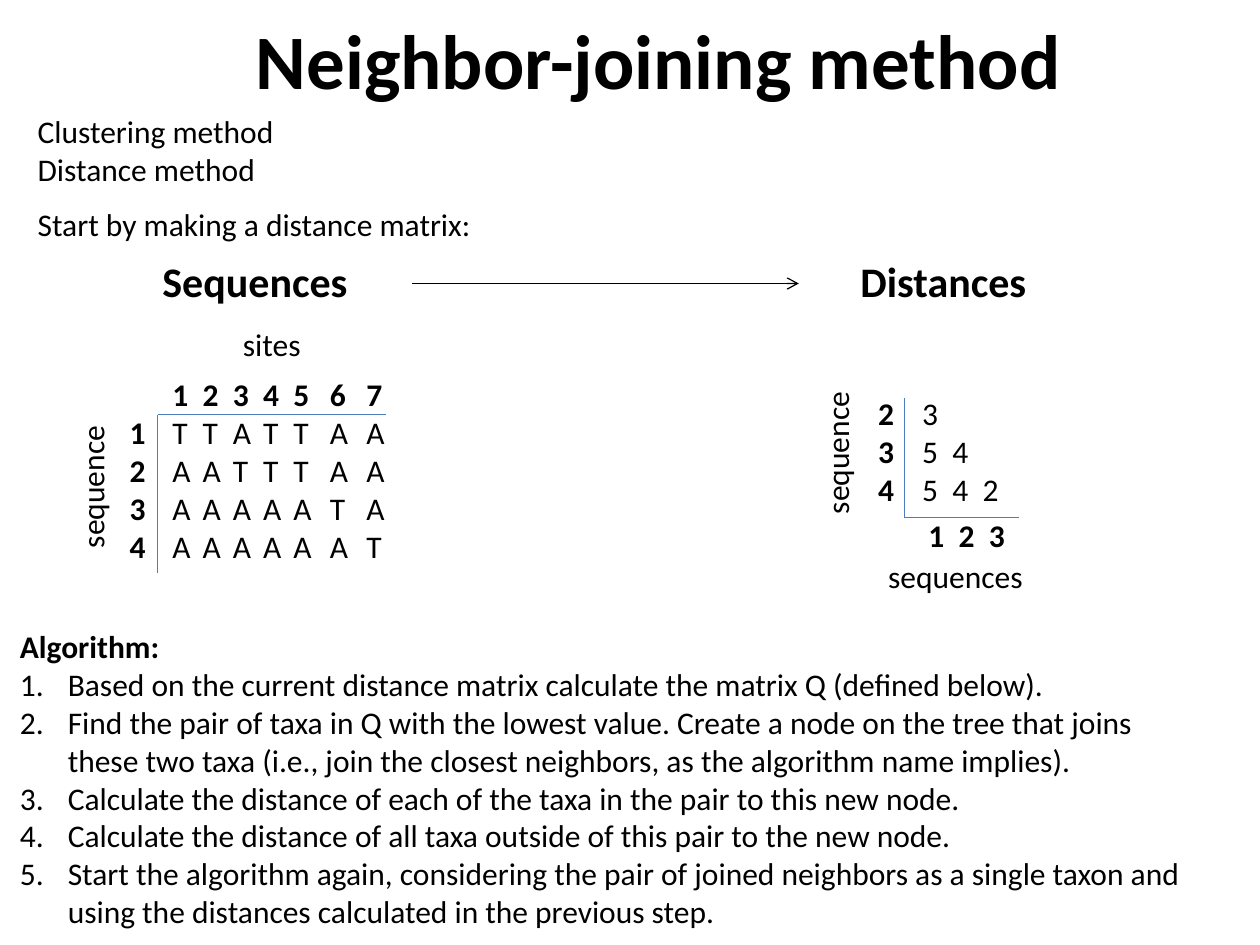
from lxml.etree import SubElement
from pptx import Presentation
from pptx.dml.color import RGBColor
from pptx.enum.shapes import MSO_CONNECTOR
from pptx.enum.text import MSO_ANCHOR, PP_ALIGN
from pptx.oxml.ns import qn
from pptx.util import Inches, Pt

WIDTH, HEIGHT = Inches(10), Inches(7.5)
BLACK, BLUE = "000000", "4B7EBC"
SITES = ["TTATTAA", "AATTTAA", "AAAAATA", "AAAAAAT"]
DISTANCES = ["3", "54", "542"]
SITE_TABS = [0.34, 0.58, 0.82, 1.06, 1.3, 1.59, 1.88]
DISTANCE_TABS = [0.35, 0.59, 0.83]
STEPS = [
    "Based on the current distance matrix calculate the matrix Q (defined below).",
    "Find the pair of taxa in Q with the lowest value. Create a node on the tree that joins\n"
    "these two taxa (i.e., join the closest neighbors, as the algorithm name implies).",
    "Calculate the distance of each of the taxa in the pair to this new node.",
    "Calculate the distance of all taxa outside of this pair to the new node.",
    "Start the algorithm again, considering the pair of joined neighbors as a single taxon and\n"
    "using the distances calculated in the previous step.",
]


def color(hex_value):
    """Turn a hex string into a colour."""
    return RGBColor.from_string(hex_value)


def across(share):
    """Turn a percentage of the slide width into a length."""
    return round(WIDTH * share / 100)


def down(share):
    """Turn a percentage of the slide height into a length."""
    return round(HEIGHT * share / 100)


def write(tf, *runs, size=18, bold=False, before=0, tabs=(), numbered=False):
    """Add one paragraph; the first run takes bold, later runs are regular."""
    p = tf.paragraphs[0]
    if p.runs:
        p = tf.add_paragraph()
    p.alignment = PP_ALIGN.LEFT
    p.space_before = Pt(before)
    pPr = p._p.get_or_add_pPr()
    if numbered:
        pPr.set("marL", str(Inches(0.38)))
        pPr.set("indent", str(-Inches(0.38)))
        SubElement(pPr, qn("a:buAutoNum"), type="arabicPeriod")
    if tabs:
        stops = SubElement(pPr, qn("a:tabLst"))
        for tab in tabs:
            SubElement(stops, qn("a:tab"), pos=str(Inches(tab)), algn="l")
    for i, text in enumerate(runs):
        for j, line in enumerate(text.split("\n")):
            if j:
                p.add_line_break()
            r = p.add_run()
            r.text = line
            r.font.name = "Calibri"
            r.font.size = Pt(size)
            r.font.bold = bold and i == 0
            r.font.color.rgb = color(BLACK)


def add_box(s, left, top, width, height, wrap=False, vertical=False):
    """Add an empty text box placed in shares of the slide."""
    sp = s.shapes.add_textbox(across(left), down(top), across(width), down(height))
    tf = sp.text_frame
    tf.word_wrap = wrap
    if vertical:
        tf._txBody.bodyPr.set("vert", "vert270")
    return tf


def add_line(s, x1, y1, x2, y2, line_color=BLUE, arrow=False):
    """Add a thin straight line, optionally with an open arrowhead."""
    sp = s.shapes.add_connector(
        MSO_CONNECTOR.STRAIGHT, across(x1), down(y1), across(x2), down(y2))
    sp.line.color.rgb = color(line_color)
    sp.line.width = Pt(0.75)
    if arrow:
        SubElement(sp.line._get_or_add_ln(), qn("a:tailEnd"), type="arrow")
    SubElement(sp._element.spPr, qn("a:effectLst"))


def add_title(s, text):
    """Place and format the title."""
    sp = s.shapes.title
    sp.left, sp.top = across(19.3), down(0.67)
    sp.width, sp.height = across(66.7), down(11.2)
    tf = sp.text_frame
    tf.word_wrap = False
    tf.vertical_anchor = MSO_ANCHOR.TOP
    write(tf, text, size=44, bold=True)


def add_intro(s):
    """Add the opening remarks."""
    tf = add_box(s, 2, 11.2, 36.8, 15.2)
    write(tf, "Clustering method")
    write(tf, "Distance method")
    write(tf, "Start by making a distance matrix:", before=9.8)


def add_algorithm(s):
    """Add the numbered steps."""
    tf = add_box(s, 0.6, 65.73, 95.7, 33.6, wrap=True)
    write(tf, "Algorithm:", bold=True)
    for step in STEPS:
        write(tf, step, numbered=True)


def header(count):
    """Return the tabbed column numbers."""
    return "".join(f"\t{n}" for n in range(1, count + 1))


def add_rows(tf, rows, first, tabs):
    """Write numbered matrix rows aligned on tab stops."""
    for number, row in enumerate(rows, first):
        write(tf, str(number), "".join(f"\t{cell}" for cell in row), bold=True, tabs=tabs)


def add_sequences(s):
    """Add the sequence matrix with its rules."""
    tf = add_box(s, 9.3, 39.07, 22.6, 21.6)
    write(tf, header(len(SITE_TABS)), bold=True, tabs=SITE_TABS)
    add_rows(tf, SITES, 1, SITE_TABS)
    add_line(s, 12.5, 43.87, 12.5, 60.67)
    add_line(s, 12.5, 43.87, 30.6, 43.87)


def add_distances(s):
    """Add the distance matrix with its rules."""
    tf = add_box(s, 68.7, 41.07, 12.2, 22.4)
    add_rows(tf, DISTANCES, 2, DISTANCE_TABS)
    write(tf, header(len(DISTANCE_TABS)), bold=True, before=4.9,
          tabs=[tab + 0.05 for tab in DISTANCE_TABS])
    add_line(s, 71.8, 42.13, 71.8, 54.8)
    add_line(s, 71.8, 54.8, 80.9, 54.8)


def main():
    """Build and save the slide."""
    prs = Presentation()
    prs.slide_width, prs.slide_height = WIDTH, HEIGHT
    s = prs.slides.add_slide(prs.slide_layouts[5])
    add_title(s, "Neighbor-joining method")
    add_intro(s)
    add_algorithm(s)
    for text, left, width in [("Sequences", 11.9, 16.9), ("Distances", 67.3, 15.3)]:
        write(add_box(s, left, 26.4, width, 6.67), text, size=24, bold=True)
    add_line(s, 32.7, 30, 63.4, 30, BLACK, arrow=True)
    add_sequences(s)
    add_distances(s)
    for left, top in [(5.3, 44.93), (64.4, 41.33)]:
        write(add_box(s, left, top, 5, 14.4, vertical=True), "sequence")
    for text, left, top, width in [("sites", 18.3, 33.73, 6.6), ("sequences", 69.5, 58.27, 12.8)]:
        write(add_box(s, left, top, width, 5.33), text)
    prs.save("out.pptx")


if __name__ == "__main__":
    main()
